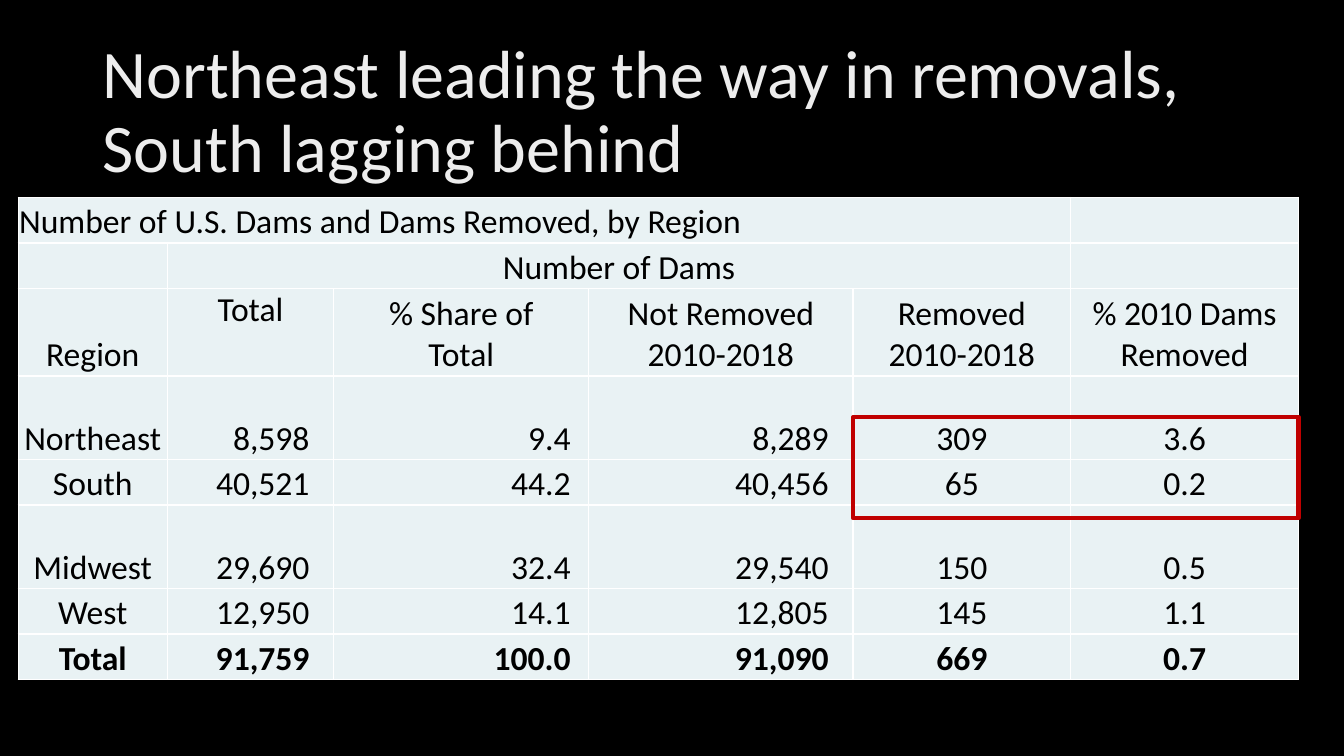
from dataclasses import dataclass
from lxml import etree
from pptx import Presentation
from pptx.dml.color import RGBColor
from pptx.enum.shapes import MSO_SHAPE
from pptx.enum.text import MSO_ANCHOR, PP_ALIGN
from pptx.oxml.ns import qn
from pptx.util import Inches, Pt

RECT = MSO_SHAPE.RECTANGLE
TOP, MIDDLE, BOTTOM = MSO_ANCHOR.TOP, MSO_ANCHOR.MIDDLE, MSO_ANCHOR.BOTTOM
LEFT, CENTER, RIGHT = PP_ALIGN.LEFT, PP_ALIGN.CENTER, PP_ALIGN.RIGHT


@dataclass(frozen=True)
class Theme:
    font: str = "Calibri"
    back: str = "000000"
    title: str = "EDEDED"
    ink: str = "000000"
    cell: str = "E9F2F4"
    grid: str = "FFFFFF"
    mark: str = "C00000"
    head: float = 48.6
    body: float = 24


THEME = Theme()
WIDTHS = [1.48, 1.65, 2.53, 2.62, 2.16, 2.26]
HEIGHTS = [0.45, 0.45, 0.87, 0.83, 0.45, 0.83, 0.45, 0.45]
PADS = {1: 0.24, 2: 0.18, 3: 0.24}
HEADS = 3
ROWS = [
    ["Number of U.S. Dams and Dams Removed, by Region", "", "", "", "", ""],
    ["", "Number of Dams", "", "", "", ""],
    ["Region", "Total", "% Share of\vTotal", "Not Removed\v2010-2018",
     "Removed\v2010-2018", "% 2010 Dams\vRemoved"],
    ["Northeast", "8,598", "9.4", "8,289", "309", "3.6"],
    ["South", "40,521", "44.2", "40,456", "65", "0.2"],
    ["Midwest", "29,690", "32.4", "29,540", "150", "0.5"],
    ["West", "12,950", "14.1", "12,805", "145", "1.1"],
    ["Total", "91,759", "100.0", "91,090", "669", "0.7"],
]


def color(code):
    return RGBColor.from_string(code)


def style(para, size, code, bold=False):
    font = para.font
    font.name, font.size, font.bold = THEME.font, Pt(size), bold
    font.color.rgb = color(code)


def add_title(slide, box, text):
    frame = slide.shapes.add_textbox(*map(Inches, box)).text_frame
    frame.word_wrap = True
    frame.vertical_anchor = MIDDLE
    frame.text = text
    para = frame.paragraphs[0]
    para.line_spacing = 0.9
    style(para, THEME.head, THEME.title)


def add_grid(cell):
    props = cell._tc.get_or_add_tcPr()
    for i, side in enumerate(("a:lnL", "a:lnR", "a:lnT", "a:lnB")):
        line = etree.Element(qn(side), w=str(Pt(1)))
        fill = etree.SubElement(line, qn("a:solidFill"))
        etree.SubElement(fill, qn("a:srgbClr"), val=THEME.grid)
        props.insert(i, line)


def fill_cell(cell, row, col, text):
    cell.fill.solid()
    cell.fill.fore_color.rgb = color(THEME.cell)
    add_grid(cell)
    number = row >= HEADS and col in PADS
    cell.margin_left = cell.margin_top = Inches(0.01)
    cell.margin_right = Inches(PADS[col] if number else 0.01)
    cell.margin_bottom = 0
    cell.vertical_anchor = TOP if (row, col) == (2, 1) else BOTTOM
    cell.text = text
    para = cell.text_frame.paragraphs[0]
    para.alignment = RIGHT if number else CENTER if row else LEFT
    style(para, THEME.body, THEME.ink, row == len(ROWS) - 1)


def add_dams(slide, left, top):
    size = sum(WIDTHS), sum(HEIGHTS)
    frame = slide.shapes.add_table(
        len(ROWS), len(WIDTHS), *map(Inches, (left, top, *size)))
    table = frame.table
    table.first_row = table.horz_banding = False
    for col, width in zip(table.columns, WIDTHS):
        col.width = Inches(width)
    for row, height in zip(table.rows, HEIGHTS):
        row.height = Inches(height)
    for i, row in enumerate(ROWS):
        for j, text in enumerate(row):
            fill_cell(table.cell(i, j), i, j, text)
    for i in range(2):
        table.cell(i, i).merge(table.cell(i, 4))


def add_mark(slide, box):
    shape = slide.shapes.add_shape(RECT, *map(Inches, box))
    shape.shadow.inherit = False
    shape.fill.background()
    shape.line.color.rgb = color(THEME.mark)
    shape.line.width = Pt(3)


def main():
    deck = Presentation()
    deck.slide_width, deck.slide_height = Inches(13.33), Inches(7.5)
    slide = deck.slides.add_slide(deck.slide_layouts[6])
    back = slide.background.fill
    back.solid()
    back.fore_color.rgb = color(THEME.back)
    add_title(slide, (0.92, 0.4, 11.5, 1.45),
              "Northeast leading the way in removals, South lagging behind")
    left, top = 0.18, 1.96
    add_dams(slide, left, top)
    add_mark(slide, (left + sum(WIDTHS[:4]), top + 2.18, sum(WIDTHS[4:]), 1))
    deck.save("out.pptx")


if __name__ == "__main__":
    main()
